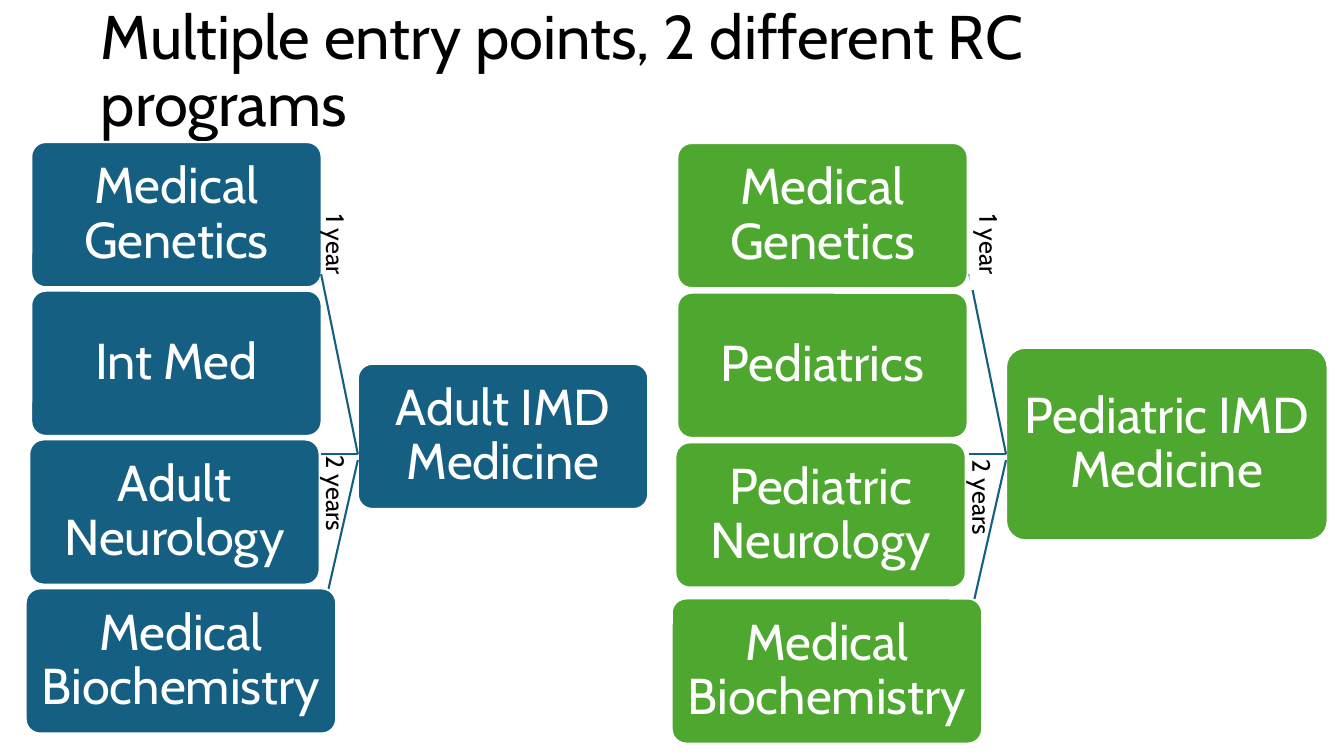
from lxml.etree import SubElement
from pptx import Presentation
from pptx.dml.color import RGBColor
from pptx.enum.shapes import MSO_CONNECTOR, MSO_SHAPE
from pptx.enum.text import MSO_ANCHOR, MSO_AUTO_SIZE, PP_ALIGN
from pptx.oxml.ns import qn
from pptx.util import Pt

BLUE, GREEN, WHITE, BLACK = "156082", "4EA72E", "FFFFFF", "000000"
BOX_WIDTH, BOX_HEIGHT, WIDE_BOX_WIDTH = 207.4, 103.7, 221.8
LINK_WIDTH, LABEL_HEIGHT = 26.2, 28.8

PROGRAMS = [
    {
        "color": BLUE,
        "left": 22.3, "top": 101.5, "pitch": 106.2,
        "entries": ["Medical Genetics", "Int Med", "Adult Neurology"],
        "biochemistry_top": 420.3,
        "goal": ("Adult IMD Medicine", 255.6, 259.9, BOX_WIDTH, BOX_HEIGHT),
        "labels": [("2 years", 205.2, 339.1, 69.8, None),
                   ("1 year", 209.5, 162, 61.2, None)],
    },
    {
        "color": GREEN,
        "left": 483.8, "top": 102.2, "pitch": 106.9,
        "entries": ["Medical Genetics", "Pediatrics", "Pediatric Neurology"],
        "biochemistry_top": 427.5,
        "goal": ("Pediatric IMD Medicine", 718.6, 248.4, 229.7, 137.5),
        "labels": [("1 year", 676.1, 162, 61.2, WHITE),
                   ("2 years", 666.7, 342, 69.8, None)],
    },
]
ENTRY_SHIFTS = [0, 0, -1.4]
BIOCHEMISTRY_SHIFT = -4
LINK_ENDS = [(195.8, 324.3), (324.3, 324.3), (443.8, 328.7)]


def rgb(color):
    return RGBColor.from_string(color)


def apply(target, values):
    for name, value in values.items():
        setattr(target, name, value)


class SlideBuilder:
    font_name = "Cabin"
    line_width = Pt(1.5)

    def __init__(self, deck):
        self.slide = deck.slides.add_slide(deck.slide_layouts[5])
        self.shapes = self.slide.shapes

    def place(self, shape, left, top, width, height):
        apply(shape, {"left": Pt(left), "top": Pt(top),
                      "width": Pt(width), "height": Pt(height)})

    def add_text(self, shape, text, size, color, frame_format, para_format):
        frame = shape.text_frame
        apply(frame, frame_format)
        para = frame.paragraphs[0]
        apply(para, para_format)
        span = para.add_run()
        span.text = text
        apply(span.font, {"name": self.font_name, "size": Pt(size)})
        span.font.color.rgb = rgb(color)

    def title(self, text, left, top, width, height):
        title = self.shapes.title
        self.place(title, left, top, width, height)
        self.add_text(title, text, 44, BLACK,
                      {"vertical_anchor": MSO_ANCHOR.MIDDLE, "word_wrap": True,
                       "auto_size": MSO_AUTO_SIZE.NONE},
                      {"alignment": PP_ALIGN.LEFT, "line_spacing": 0.9})

    def box(self, text, left, top, width, height, color):
        box = self.shapes.add_shape(MSO_SHAPE.ROUNDED_RECTANGLE, 0, 0, 0, 0)
        self.place(box, left, top, width, height)
        box.adjustments[0] = 0.1
        box.shadow.inherit = False
        box.fill.solid()
        box.fill.fore_color.rgb = rgb(color)
        box.line.color.rgb = rgb(WHITE)
        box.line.width = self.line_width
        margins = dict.fromkeys(
            ["margin_left", "margin_top", "margin_right", "margin_bottom"], Pt(5))
        self.add_text(box, text, 36, WHITE,
                      {"vertical_anchor": MSO_ANCHOR.MIDDLE, "word_wrap": True, **margins},
                      {"alignment": PP_ALIGN.CENTER, "line_spacing": 0.9})

    def link(self, start_x, start_y, end_x, end_y):
        link = self.shapes.add_connector(
            MSO_CONNECTOR.STRAIGHT, Pt(start_x), Pt(start_y), Pt(end_x), Pt(end_y))
        link.line.color.rgb = rgb(BLUE)
        link.line.width = self.line_width
        SubElement(link._element.spPr, qn("a:effectLst"))

    def label(self, text, left, top, width, fill):
        """Add a duration that reads downwards."""
        label = self.shapes.add_textbox(0, 0, 0, 0)
        self.place(label, left, top, width, LABEL_HEIGHT)
        label.rotation = 90
        if fill:
            label.fill.solid()
            label.fill.fore_color.rgb = rgb(fill)
        self.add_text(label, text, 18, BLACK,
                      {"word_wrap": False, "auto_size": MSO_AUTO_SIZE.SHAPE_TO_FIT_TEXT},
                      {"alignment": PP_ALIGN.LEFT})

    def program(self, program):
        color, left = program["color"], program["left"]
        for row, (entry, shift) in enumerate(zip(program["entries"], ENTRY_SHIFTS)):
            self.box(entry, left + shift, program["top"] + row * program["pitch"],
                     BOX_WIDTH, BOX_HEIGHT, color)
        self.box(*program["goal"], color)
        goal_left = program["goal"][1]
        for start_y, end_y in LINK_ENDS:
            self.link(goal_left - LINK_WIDTH, start_y, goal_left, end_y)
        for label in program["labels"]:
            self.label(*label)
        self.box("Medical Biochemistry", left + BIOCHEMISTRY_SHIFT,
                 program["biochemistry_top"], WIDE_BOX_WIDTH, BOX_HEIGHT, color)


def main():
    deck = Presentation()
    apply(deck, {"slide_width": Pt(960), "slide_height": Pt(540)})
    builder = SlideBuilder(deck)
    builder.title("Multiple entry points, 2 different RC programs", 64.8, 0, 837.4, 104.4)
    for program in PROGRAMS:
        builder.program(program)
    deck.save("out.pptx")


if __name__ == "__main__":
    main()
